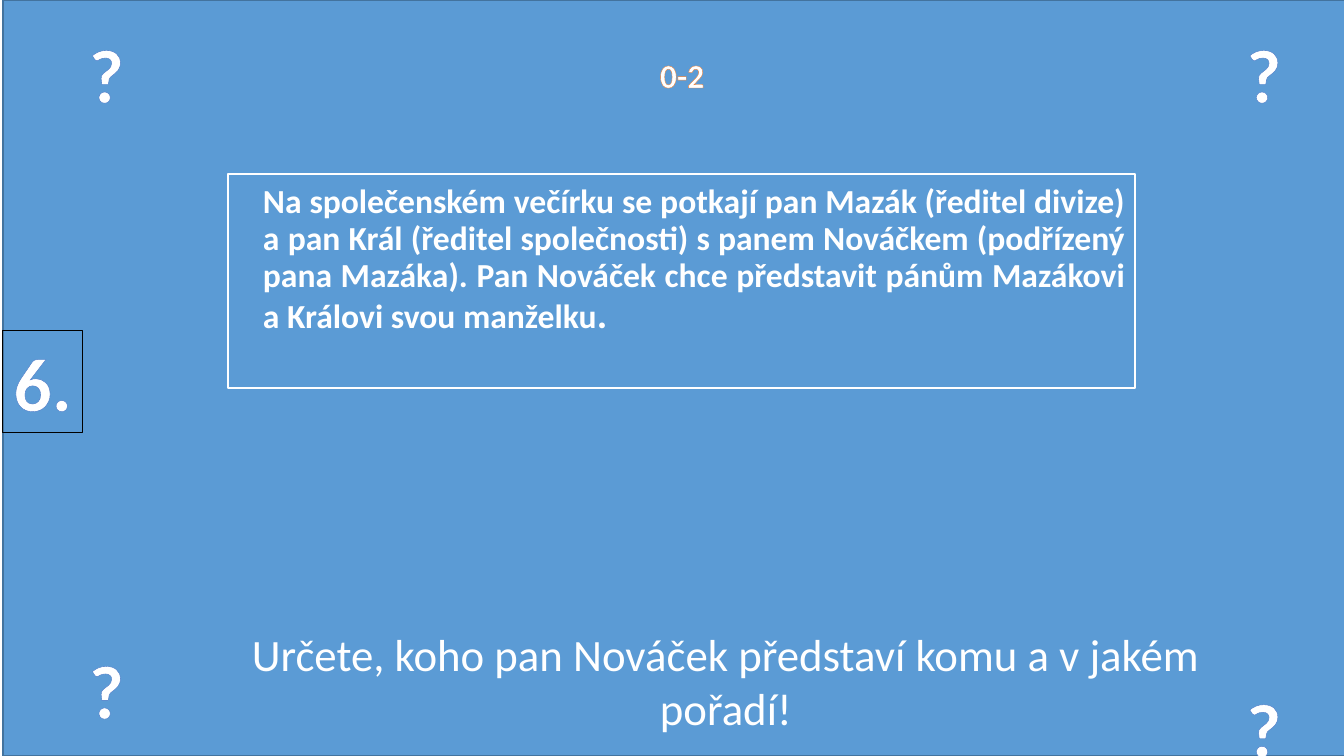
from dataclasses import dataclass
from typing import Optional

from lxml.etree import SubElement
from pptx import Presentation
from pptx.dml.color import RGBColor
from pptx.enum.shapes import MSO_SHAPE as Preset
from pptx.enum.text import MSO_ANCHOR as Anchor, MSO_AUTO_SIZE as AutoSize, PP_ALIGN as Align
from pptx.oxml.ns import qn
from pptx.shapes.autoshape import Shape
from pptx.slide import Slide
from pptx.util import Inches, Pt

WHITE = RGBColor(0xFF, 0xFF, 0xFF)
BLACK = RGBColor(0x00, 0x00, 0x00)
SKY = RGBColor(0x5B, 0x9B, 0xD5)
NAVY = RGBColor(0x43, 0x73, 0x9E)
BLUE = RGBColor(0x44, 0x72, 0xC4)
ORANGE = RGBColor(0xED, 0x7D, 0x31)

FONT = "Calibri"
SLIDE_WIDTH, SLIDE_HEIGHT = Inches(13.33), Inches(7.5)
COLUMN, ROW = SLIDE_WIDTH / 100, SLIDE_HEIGHT / 100

EDGE = 0.22
MARK_WIDTH, MARK_HEIGHT = 4.12, 13.47
LEFT_MARK, RIGHT_MARK = 5.85, 91.97
TOP_MARK, LOW_MARK, LOWEST_MARK = 2.93, 84.4, 89.47


@dataclass(frozen=True)
class Area:
    column: float
    row: float
    columns: float
    rows: float

    def box(self) -> tuple[int, int, int, int]:
        return (int(self.column * COLUMN), int(self.row * ROW),
                int(self.columns * COLUMN), int(self.rows * ROW))


@dataclass(frozen=True)
class Stroke:
    color: RGBColor
    points: float


@dataclass(frozen=True)
class Span:
    text: str
    size: int
    bold: bool = False
    italic: bool = False
    outline: Optional[Stroke] = None


@dataclass(frozen=True)
class Caption:
    area: Area
    span: Span
    wrap: bool = False


QUESTION_MARK = Span("?", 54, bold=True, outline=Stroke(BLUE, 0.8))
MARK_CORNERS = [
    (LEFT_MARK, TOP_MARK),
    (RIGHT_MARK, TOP_MARK),
    (LEFT_MARK, LOW_MARK),
    (RIGHT_MARK, LOWEST_MARK),
]
CAPTIONS = [
    Caption(Area(column, row, MARK_WIDTH, MARK_HEIGHT), QUESTION_MARK)
    for column, row in MARK_CORNERS
] + [
    Caption(Area(15.6, 82.27, 76.82, 15.73),
            Span("Určete, koho pan Nováček představí komu a v jakém pořadí!", 32), wrap=True),
    Caption(Area(48.31, 6.53, 4.88, 6.67),
            Span("0-2", 24, bold=True, outline=Stroke(ORANGE, 0.52))),
]
TASK_NUMBER = Span("6.", 54, bold=True, outline=Stroke(BLUE, 0.8))
SCENARIO = [
    Span("\t", 28, italic=True),
    Span("Na společenském večírku se potkají pan Mazák (ředitel divize) "
         "a pan Král (ředitel společnosti) s panem Nováčkem (podřízený pana Mazáka). "
         "Pan Nováček chce představit pánům Mazákovi a Královi svou manželku", 24, bold=True),
    Span(".", 28, bold=True),
]


def write(shape: Shape, spans: list[Span], align: Align, wrap: bool) -> None:
    frame = shape.text_frame
    frame.word_wrap = wrap
    frame.vertical_anchor = Anchor.TOP
    paragraph = frame.paragraphs[0]
    paragraph.alignment = align
    paragraph.text = spans[0].text
    for span in spans[1:]:
        paragraph.add_run().text = span.text
    for run, span in zip(paragraph.runs, spans):
        font = run.font
        font.name, font.size = FONT, Pt(span.size)
        font.bold, font.italic = span.bold, span.italic
        font.color.rgb = WHITE
        if span.outline:
            outline_text(font, span.outline)


def outline_text(font, stroke: Stroke) -> None:
    properties = font._element
    line = SubElement(properties, qn("a:ln"), w=str(Pt(stroke.points)))
    properties.insert(0, line)
    fill = SubElement(line, qn("a:solidFill"))
    SubElement(fill, qn("a:srgbClr"), val=str(stroke.color))


def draw_panel(slide: Slide, area: Area, stroke: Stroke, filled: bool = True) -> Shape:
    panel = slide.shapes.add_shape(Preset.RECTANGLE, *area.box())
    panel.shadow.inherit = False
    if filled:
        panel.fill.solid()
        panel.fill.fore_color.rgb = SKY
    else:
        panel.fill.background()
    panel.line.color.rgb = stroke.color
    panel.line.width = Pt(stroke.points)
    return panel


def draw_caption(slide: Slide, caption: Caption) -> None:
    label = slide.shapes.add_textbox(*caption.area.box())
    write(label, [caption.span], Align.CENTER, caption.wrap)
    label.text_frame.auto_size = AutoSize.SHAPE_TO_FIT_TEXT


def draw_task_number(slide: Slide) -> None:
    badge = draw_panel(slide, Area(EDGE, 43.73, 5.92, MARK_HEIGHT), Stroke(BLACK, 0.75), filled=False)
    write(badge, [TASK_NUMBER], Align.CENTER, wrap=False)
    badge.text_frame.auto_size = AutoSize.SHAPE_TO_FIT_TEXT


def draw_scenario(slide: Slide) -> None:
    panel = draw_panel(slide, Area(16.95, 23.07, 67.52, 28.27), Stroke(WHITE, 1.5))
    write(panel, SCENARIO, Align.JUSTIFY, wrap=True)
    paragraph = panel.text_frame.paragraphs[0]
    paragraph.line_spacing = 0.9
    paragraph.space_before = Pt(10)
    indents = paragraph._p.get_or_add_pPr()
    indents.set("marL", str(Inches(0.25)))
    indents.set("indent", str(Inches(-0.25)))


def main() -> None:
    deck = Presentation()
    deck.slide_width, deck.slide_height = SLIDE_WIDTH, SLIDE_HEIGHT
    slide = deck.slides.add_slide(deck.slide_layouts[6])
    draw_panel(slide, Area(EDGE, 0, 100, 100), Stroke(NAVY, 1))
    for caption in CAPTIONS:
        draw_caption(slide, caption)
    draw_task_number(slide)
    draw_scenario(slide)
    deck.save("out.pptx")


if __name__ == "__main__":
    main()
